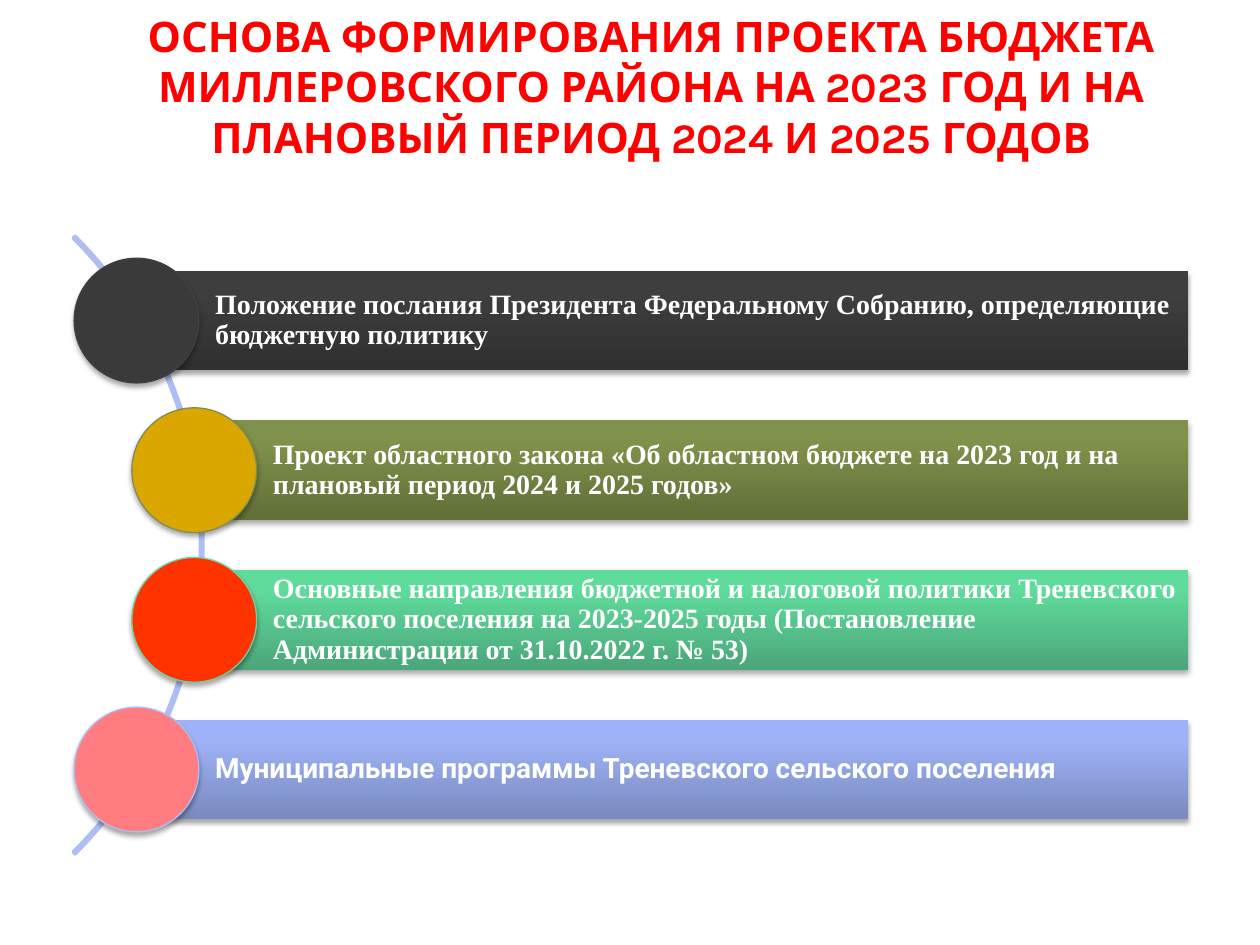
from dataclasses import dataclass

from lxml.etree import SubElement
from pptx import Presentation
from pptx.dml.color import RGBColor
from pptx.enum.shapes import MSO_SHAPE
from pptx.enum.text import MSO_ANCHOR, MSO_AUTO_SIZE, PP_ALIGN
from pptx.oxml.ns import qn
from pptx.util import Pt


@dataclass(frozen=True)
class Theme:
    """Colours, fonts and type sizes of the slide."""
    title: str = "FF0000"
    text: str = "FFFFFF"
    arc: str = "AEBEF4"
    shade: str = "000000"
    head_font: str = "Karla"
    head_size: int = 24
    body_size: int = 16


@dataclass(frozen=True)
class Item:
    """One bar with its round marker."""
    text: str
    mid: float
    dark: str
    light: str
    dot: str
    edge: str
    font: str = "Times New Roman"


THEME = Theme()
TITLE = ("ОСНОВА ФОРМИРОВАНИЯ ПРОЕКТА БЮДЖЕТА МИЛЛЕРОВСКОГО РАЙОНА "
         "НА 2023 ГОД И НА ПЛАНОВЫЙ ПЕРИОД 2024 И 2025 ГОДОВ")
OUTER, INNER = 78, 111
ITEMS = [
    Item("Положение послания Президента Федеральному Собранию, "
         "определяющие бюджетную политику",
         OUTER, "303030", "3E3E3E", "3A3A3A", "404040"),
    Item("Проект областного закона «Об областном бюджете на 2023 год "
         "и на плановый период 2024 и 2025 годов»",
         INNER, "616F38", "7F914A", "DAA600", "7F8D54"),
    Item("Основные направления бюджетной и налоговой политики Треневского "
         "сельского поселения на 2023-2025 годы "
         "(Постановление Администрации от 31.10.2022 г. № 53)",
         INNER, "4BA67A", "5FDB9C", "FF3300", "71D1A0"),
    Item("Муниципальные программы Треневского сельского поселения",
         OUTER, "7A8ABE", "9EB2F7", "FF7C80", "AEBEF4", "Roboto"),
]
RIGHT, FIRST, STEP = 679, 183.2, 85.5
BAR, DOT = 57, 71.3


def color(code):
    """Turn a hex code into a colour."""
    return RGBColor.from_string(code)


def style(para, font, size, code):
    """Set bold type on a paragraph's runs."""
    for run in para.runs:
        run.font.name = font
        run.font.size = Pt(size)
        run.font.bold = True
        run.font.color.rgb = color(code)


def inset(frame, left, top, right, bottom):
    """Set the four margins of a text frame."""
    frame.margin_left, frame.margin_top = Pt(left), Pt(top)
    frame.margin_right, frame.margin_bottom = Pt(right), Pt(bottom)


def add_shape(slide, kind, left, top, width, height):
    """Add a preset shape without the default shadow."""
    shape = slide.shapes.add_shape(
        kind, Pt(left), Pt(top), Pt(width), Pt(height))
    shape.shadow.inherit = False
    return shape


def add_shade(shape):
    """Give a shape a soft shadow below it."""
    effect = shape.element.spPr.find(qn("a:effectLst"))
    outer = SubElement(effect, qn("a:outerShdw"), blurRad=str(Pt(3.1)),
                       dist=str(Pt(1.8)), dir="5400000", rotWithShape="0")
    tone = SubElement(outer, qn("a:srgbClr"), val=THEME.shade)
    SubElement(tone, qn("a:alpha"), val="35000")


def add_title(slide):
    """Fill and place the title."""
    title = slide.shapes.title
    title.left, title.top = Pt(48), Pt(12)
    title.width, title.height = Pt(648), Pt(99.5)
    frame = title.text_frame
    frame.text = TITLE
    frame.word_wrap = True
    frame.auto_size = MSO_AUTO_SIZE.NONE
    frame.vertical_anchor = MSO_ANCHOR.MIDDLE
    inset(frame, 7.2, 3.6, 7.2, 29)
    para = frame.paragraphs[0]
    para.alignment = PP_ALIGN.CENTER
    style(para, THEME.head_font, THEME.head_size, THEME.title)


def add_arc(slide):
    """Draw the thin arc that links the markers."""
    arc = add_shape(slide, MSO_SHAPE.BLOCK_ARC, -383, 62, 499, 499)
    for index, value in enumerate((189, 27, 0.003)):
        arc.adjustments[index] = value
    arc.fill.background()
    arc.line.color.rgb = color(THEME.arc)
    arc.line.width = Pt(2)


def add_bar(slide, item, center):
    """Draw a shaded bar with its text."""
    bar = add_shape(slide, MSO_SHAPE.RECTANGLE, item.mid, center - BAR / 2,
                    RIGHT - item.mid, BAR)
    bar.fill.gradient()
    bar.fill.gradient_angle = 90
    stops = zip(bar.fill.gradient_stops, (0, 0.8), (item.dark, item.light))
    for stop, place, code in stops:
        stop.position = place
        stop.color.rgb = color(code)
    bar.line.fill.background()
    add_shade(bar)
    frame = bar.text_frame
    frame.text = item.text
    frame.word_wrap = True
    frame.vertical_anchor = MSO_ANCHOR.MIDDLE
    inset(frame, 45, 3, 3, 3)
    para = frame.paragraphs[0]
    para.alignment = PP_ALIGN.LEFT
    para.line_spacing = 0.9
    style(para, item.font, THEME.body_size, THEME.text)


def add_dot(slide, item, center):
    """Draw the round marker at the start of a bar."""
    dot = add_shape(slide, MSO_SHAPE.OVAL, item.mid - DOT / 2,
                    center - DOT / 2, DOT, DOT)
    dot.fill.solid()
    dot.fill.fore_color.rgb = color(item.dot)
    dot.line.color.rgb = color(item.edge)
    dot.line.width = Pt(0.75)
    add_shade(dot)


def main():
    """Build and save the slide."""
    deck = Presentation()
    deck.slide_width, deck.slide_height = Pt(720), Pt(540)
    slide = deck.slides.add_slide(deck.slide_layouts[5])
    add_title(slide)
    add_arc(slide)
    for index, item in enumerate(ITEMS):
        center = FIRST + index * STEP
        add_bar(slide, item, center)
        add_dot(slide, item, center)
    deck.save("out.pptx")


if __name__ == "__main__":
    main()
